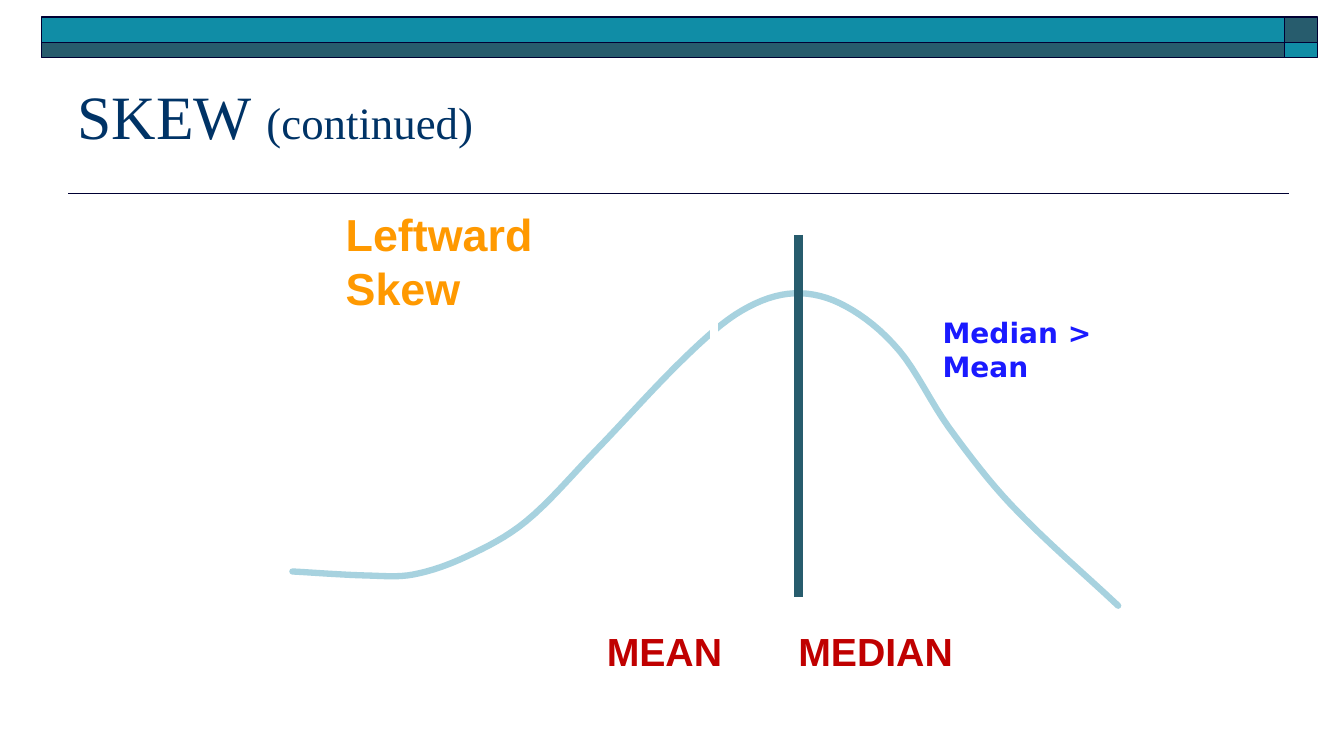
from dataclasses import dataclass

from lxml import etree
from pptx import Presentation
from pptx.dml.color import RGBColor
from pptx.enum.shapes import MSO_CONNECTOR, MSO_SHAPE
from pptx.enum.text import MSO_ANCHOR
from pptx.oxml.ns import qn
from pptx.util import Inches, Pt

STRAIGHT = MSO_CONNECTOR.STRAIGHT
RECTANGLE = MSO_SHAPE.RECTANGLE
TOP, MIDDLE = MSO_ANCHOR.TOP, MSO_ANCHOR.MIDDLE


@dataclass(frozen=True)
class Theme:
    teal: str = "108DA6"
    dark_teal: str = "275C6D"
    outline: str = "000033"
    title: str = "003366"
    curve: str = "A7D2DF"
    orange: str = "FF9900"
    red: str = "C00000"
    blue: str = "1A1AFF"
    white: str = "FFFFFF"
    title_size: int = 44
    heading_size: int = 32
    label_size: int = 28
    note_size: int = 20
    title_font: str = "Times New Roman"
    label_font: str = "Arial"
    note_font: str = "DejaVu Sans"


theme = Theme()

presentation = Presentation()
presentation.slide_width = Inches(13.33)
presentation.slide_height = Inches(7.5)
slide = presentation.slides.add_slide(presentation.slide_layouts[6])
slide.background.fill.solid()
slide.background.fill.fore_color.rgb = RGBColor.from_string(theme.white)


def add_line(start, end, color, width):
    connector = slide.shapes.add_connector(STRAIGHT, *map(Inches, start + end))
    connector.line.color.rgb = RGBColor.from_string(color)
    connector.line.width = Pt(width)
    etree.SubElement(connector._element.spPr, qn("a:effectLst"))


def add_text(box, runs, font, color, bold=True, anchor=TOP, spacing=1.0, right_inset=0.1):
    shape = slide.shapes.add_textbox(*map(Inches, box))
    frame = shape.text_frame
    frame.word_wrap = True
    frame.vertical_anchor = anchor
    frame.margin_right = Inches(right_inset)
    paragraph = frame.paragraphs[0]
    paragraph.line_spacing = spacing
    for text, size in runs:
        run = paragraph.add_run()
        run.text = text
        run.font.name = font
        run.font.size = Pt(size)
        run.font.bold = bold
        run.font.color.rgb = RGBColor.from_string(color)


title_rule_y = 1.92
add_line((12.78, title_rule_y), (0.67, title_rule_y), theme.outline, 1)

band_columns = [(0.41, 12.33), (12.74, 0.33)]
band_rows = [(0.17, 0.25), (0.42, 0.15)]
for row, (top, height) in enumerate(band_rows):
    for column, (left, width) in enumerate(band_columns):
        band = slide.shapes.add_shape(RECTANGLE, *map(Inches, (left, top, width, height)))
        band.shadow.inherit = False
        band.fill.solid()
        color = theme.teal if row == column else theme.dark_teal
        band.fill.fore_color.rgb = RGBColor.from_string(color)
        band.line.color.rgb = RGBColor.from_string(theme.outline)
        band.line.width = Pt(1)

mean_x, median_x = 7.08, 7.92
marker_top, marker_bottom = 2.33, 5.92
label_width = 1.9
label_lefts = {"MEAN": 5.92, "MEDIAN": 5.92 + label_width}
for label, left in label_lefts.items():
    add_text((left, 6.17, label_width, 0.57), [(label, theme.label_size)],
             theme.label_font, theme.red)

add_text((3.33, 2, 3.31, 0.63), [("Leftward Skew", theme.heading_size)],
         theme.label_font, theme.orange, right_inset=1)
add_text((0.67, 0.58, 12, 1.25),
         [("SKEW ", theme.title_size), ("(continued)", theme.heading_size)],
         theme.title_font, theme.title, bold=False, anchor=MIDDLE, spacing=0.8)

left_tail = [(2.9, 5.67), (3.64, 5.71), (4.1, 5.7), (4.63, 5.52)]
rising_side = [(5.22, 5.17), (5.9, 4.48), (6.81, 3.53), (7.36, 3.08)]
peak = [(7.88, 2.91)]
falling_side = [(8.39, 3.04), (8.92, 3.48), (9.41, 4.24)]
right_tail = [(10.03, 5.01), (11.09, 6.01)]
knots = left_tail + rising_side + peak + falling_side + right_tail

last = len(knots) - 1
slopes = []
for index in range(len(knots)):
    before_x, before_y = knots[max(index - 1, 0)]
    after_x, after_y = knots[min(index + 1, last)]
    slopes.append((after_y - before_y) / (after_x - before_x))

steps_per_span = 8
curve_points = [knots[0]]
for index in range(last):
    (start_x, start_y), (end_x, end_y) = knots[index:index + 2]
    span = end_x - start_x
    for step in range(1, steps_per_span + 1):
        t = step / steps_per_span
        blend = t * t * (3 - 2 * t)
        start_bend = t * (1 - t) ** 2 * slopes[index]
        end_bend = t * t * (t - 1) * slopes[index + 1]
        y = start_y + blend * (end_y - start_y) + span * (start_bend + end_bend)
        curve_points.append((start_x + t * span, y))

curve_start, *curve_rest = [(Inches(x), Inches(y)) for x, y in curve_points]
builder = slide.shapes.build_freeform(*curve_start)
builder.add_line_segments(curve_rest, close=False)
curve = builder.convert_to_shape()
curve.shadow.inherit = False
curve.fill.background()
curve.line.color.rgb = RGBColor.from_string(theme.curve)
curve.line.width = Pt(4.5)
curve_line = curve._element.spPr.find(qn("a:ln"))
curve_line.set("cap", "rnd")
etree.SubElement(curve_line, qn("a:round"))

for x, color in [(median_x, theme.dark_teal), (mean_x, theme.white)]:
    add_line((x, marker_top), (x, marker_bottom), color, 6)

add_text((9.25, 3.08, 2.61, 0.44), [("Median > Mean", theme.note_size)],
         theme.note_font, theme.blue, right_inset=0.9)

presentation.save("out.pptx")
